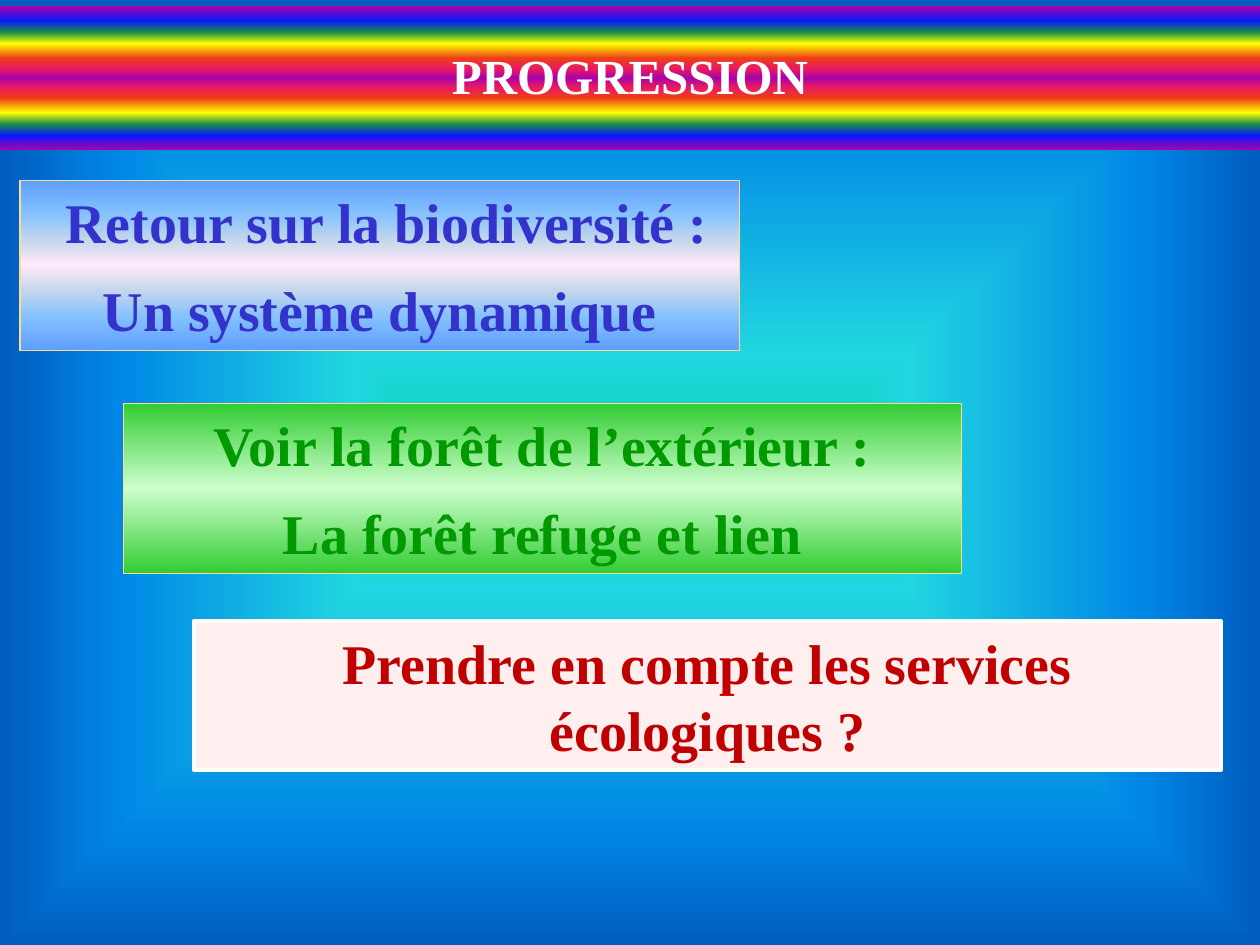
"""Build the PROGRESSION slide: a rainbow title band and three stepped boxes."""
from dataclasses import dataclass
from typing import Optional, Union

from lxml.etree import SubElement
from pptx import Presentation
from pptx.dml.color import RGBColor as RGB
from pptx.enum.shapes import MSO_SHAPE as Shape
from pptx.enum.text import MSO_ANCHOR as Anchor, MSO_AUTO_SIZE as AutoSize, PP_ALIGN as Align
from pptx.oxml.ns import qn
from pptx.util import Inches, Pt

Stops = tuple[tuple[int, str], ...]


def mirrored(*half: tuple[int, str]) -> Stops:
    """Reflect the stops of the first half around the last one."""
    return half + tuple((100 - pos, color) for pos, color in half[-2::-1])


@dataclass(frozen=True)
class Theme:
    font: str = "Times New Roman"
    title_size: int = 28
    box_size: int = 32
    gap: int = 6
    white: str = "FFFFFF"
    gold: str = "FFDA91"
    blue: str = "3333CC"
    green: str = "009900"
    red: str = "C00000"
    pink: str = "FFEFEF"
    backdrop: Stops = ((0, "03D4A8"), (25, "21D6E0"), (75, "0087E6"), (100, "005CBF"))
    sky: Stops = mirrored((0, "5E9EFF"), (20, "85C2FF"), (35, "C4D6EB"), (50, "FFEBFA"))
    leaf: Stops = mirrored((0, "33CC33"), (50, "CCFFCC"))
    rainbow: Stops = mirrored((0, "A603AB"), (10, "0819FB"), (18, "1A8D48"), (26, "FFFF00"),
                              (36, "EE3F17"), (44, "E81766"), (50, "A603AB"))


@dataclass(frozen=True)
class Area:
    """Place and size in percent of the slide's width and height."""
    left: float
    top: float
    width: float
    height: float


@dataclass(frozen=True)
class Box:
    area: Area
    lines: tuple[str, ...]
    color: str
    fill: Union[str, Stops]
    line: str
    line_width: float


T = Theme()
W, H = Inches(10), Inches(7.5)
TITLE = Area(0, 0.67, 100, 15.2)
BOXES = (
    Box(Area(1.6, 19.07, 57.1, 18), (" Retour sur la biodiversité :", "Un système dynamique"),
        T.blue, T.sky, T.gold, 0.75),
    Box(Area(9.8, 42.67, 66.5, 18), ("Voir la forêt de l’extérieur :", "La forêt refuge et lien"),
        T.green, T.leaf, T.gold, 0.75),
    Box(Area(15.4, 65.73, 81.5, 15.73), ("Prendre en compte les services écologiques ?",),
        T.red, T.pink, T.white, 2.25),
)


def set_gradient(owner, stops: Stops, angle: Optional[int] = 90) -> None:
    """Fill with a linear gradient, or one from the centre when angle is None."""
    owner.fill.gradient()
    grad = owner.fill._fill._gradFill
    for child in list(grad):
        grad.remove(child)
    gs_list = SubElement(grad, qn("a:gsLst"))
    for pos, color in stops:
        gs = SubElement(gs_list, qn("a:gs"), pos=str(pos * 1000))
        SubElement(gs, qn("a:srgbClr"), val=color)
    if angle is None:
        shade = SubElement(grad, qn("a:path"), {"path": "shape"})
        SubElement(shade, qn("a:fillToRect"), dict.fromkeys("ltrb", "50000"))
    else:
        SubElement(grad, qn("a:lin"), ang=str(angle * 60000), scaled="0")


def place(sp, area: Area) -> None:
    """Move and size a shape."""
    sp.left, sp.top = round(W * area.left / 100), round(H * area.top / 100)
    sp.width, sp.height = round(W * area.width / 100), round(H * area.height / 100)


def write(sp, lines: tuple[str, ...], size: int, color: str) -> None:
    """Write centred bold paragraphs with equal gaps between them."""
    tf = sp.text_frame
    tf.word_wrap, tf.auto_size, tf.vertical_anchor = True, AutoSize.NONE, Anchor.MIDDLE
    tf.text = "\n".join(lines)
    for i, p in enumerate(tf.paragraphs):
        p.alignment = Align.CENTER
        p.space_before = Pt(T.gap if i else 0)
        p.space_after = Pt(T.gap if i < len(lines) - 1 else 0)
        p.font.name, p.font.size, p.font.bold = T.font, Pt(size), True
        p.font.color.rgb = RGB.from_string(color)


def add_box(s, box: Box) -> None:
    """Draw one outlined text box."""
    sp = s.shapes.add_shape(Shape.RECTANGLE, 0, 0, 0, 0)
    place(sp, box.area)
    sp.shadow.inherit = False
    if isinstance(box.fill, str):
        sp.fill.solid()
        sp.fill.fore_color.rgb = RGB.from_string(box.fill)
    else:
        set_gradient(sp, box.fill)
    sp.line.color.rgb = RGB.from_string(box.line)
    sp.line.width = Pt(box.line_width)
    write(sp, box.lines, T.box_size, box.color)


def main() -> None:
    """Build and save the slide."""
    prs = Presentation()
    prs.slide_width, prs.slide_height = W, H
    s = prs.slides.add_slide(prs.slide_layouts[5])
    set_gradient(s.background, T.backdrop, None)
    title = s.shapes.title
    place(title, TITLE)
    set_gradient(title, T.rainbow)
    write(title, ("PROGRESSION",), T.title_size, T.white)
    title.text_frame.margin_bottom = Inches(0.1)
    for box in BOXES:
        add_box(s, box)
    prs.save("out.pptx")


if __name__ == "__main__":
    main()
